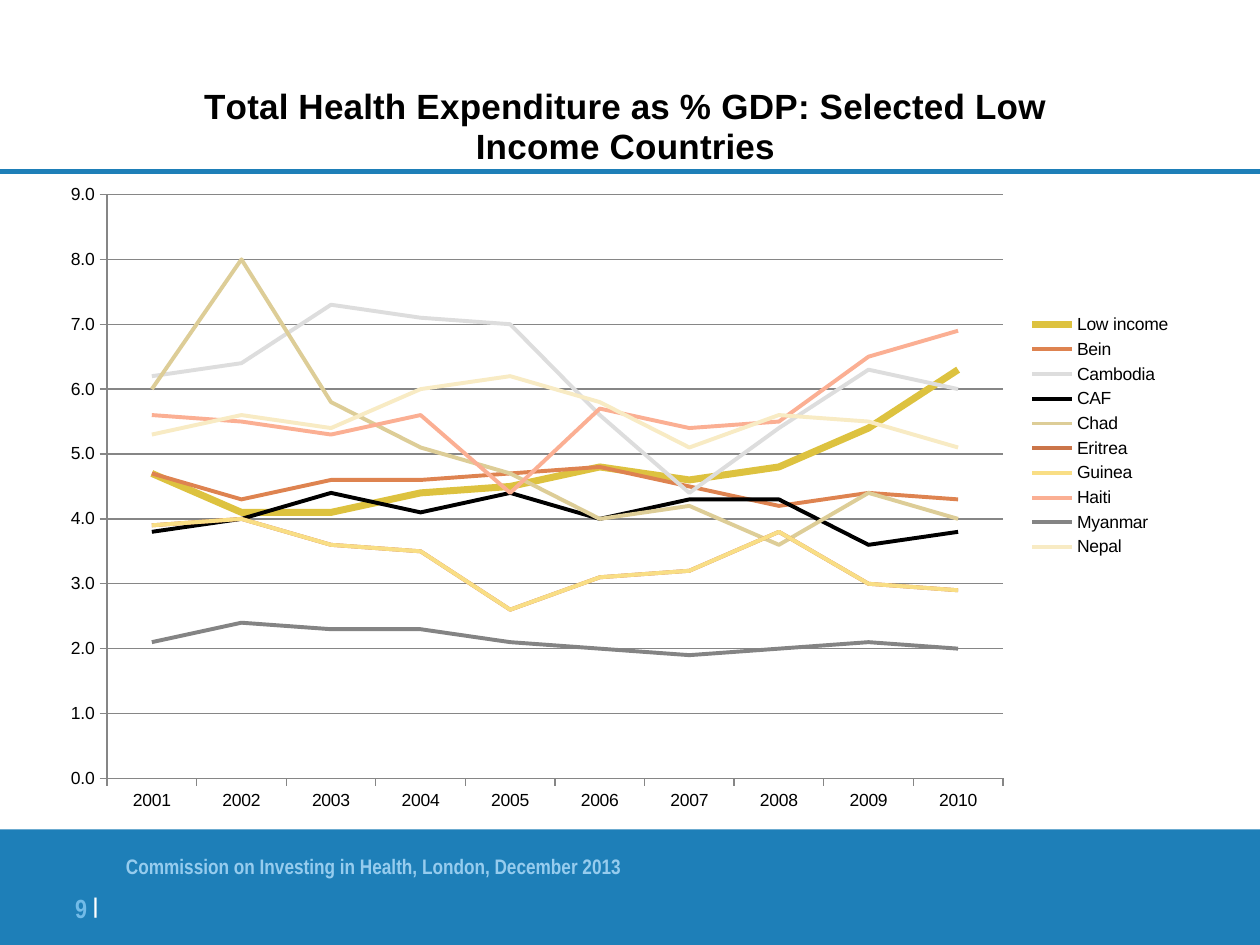
from lxml.etree import SubElement
from pptx import Presentation
from pptx.chart.data import CategoryChartData
from pptx.dml.color import RGBColor as RGB
from pptx.enum.chart import XL_CHART_TYPE as CHART, XL_LEGEND_POSITION as LEGEND, XL_TICK_MARK as TICK
from pptx.enum.shapes import MSO_CONNECTOR as CONN, MSO_SHAPE as SHAPE
from pptx.enum.text import PP_ALIGN as ALIGN
from pptx.oxml import parse_xml
from pptx.oxml.ns import nsdecls, qn
from pptx.util import Pt

TITLE = "Total Health Expenditure as % GDP: Selected Low Income Countries"
FOOTER = "Commission on Investing in Health, London, December 2013"
YEARS = [str(y) for y in range(2001, 2011)]
SERIES = [
    ("Low income", "DDC23F", [4.7, 4.1, 4.1, 4.4, 4.5, 4.8, 4.6, 4.8, 5.4, 6.3]),
    ("Bein", "DE8350", [4.7, 4.3, 4.6, 4.6, 4.7, 4.8, 4.5, 4.2, 4.4, 4.3]),
    ("Cambodia", "DDDDDD", [6.2, 6.4, 7.3, 7.1, 7, 5.6, 4.4, 5.4, 6.3, 6]),
    ("CAF", "000000", [3.8, 4, 4.4, 4.1, 4.4, 4, 4.3, 4.3, 3.6, 3.8]),
    ("Chad", "DDCD97", [6, 8, 5.8, 5.1, 4.7, 4, 4.2, 3.6, 4.4, 4]),
    ("Eritrea", "CB7549", [3.9, 4, 3.6, 3.5, 2.6, 3.1, 3.2, 3.8, 3, 2.9]),
    ("Guinea", "F9DE85", [3.9, 4, 3.6, 3.5, 2.6, 3.1, 3.2, 3.8, 3, 2.9]),
    ("Haiti", "FBAF93", [5.6, 5.5, 5.3, 5.6, 4.4, 5.7, 5.4, 5.5, 6.5, 6.9]),
    ("Myanmar", "848484", [2.1, 2.4, 2.3, 2.3, 2.1, 2, 1.9, 2, 2.1, 2]),
    ("Nepal", "F8EBC4", [5.3, 5.6, 5.4, 6, 6.2, 5.8, 5.1, 5.6, 5.5, 5.1]),
]
THEME = dict(
    blue="1E7FB8", footer="96CCEE", number="72BBE8", bar="FFFFFF", ink="000000", grid="868686",
    font="Arial", narrow="Arial Narrow",
    title=20, chart=10, footer_size=12, number_size=15, bar_size=21,
)
WIDTH, HEIGHT = 720, 540
RULE_Y, BAND_Y = 98, 474


def style(font, name, size, color, bold=False):
    """Set the face, size, colour and weight of a font."""
    font.name, font.size, font.bold = name, Pt(size), bold
    font.color.rgb = RGB.from_string(color)


def stroke(line, color, width):
    """Give a line its colour and width."""
    line.color.rgb, line.width = RGB.from_string(color), Pt(width)


def add_text(s, box, runs, align=ALIGN.LEFT):
    """Add a one-paragraph text box of (text, size, colour) runs."""
    tf = s.shapes.add_textbox(*map(Pt, box)).text_frame
    tf.word_wrap = True
    tf.margin_left = tf.margin_right = tf.margin_top = tf.margin_bottom = 0
    p = tf.paragraphs[0]
    p.alignment = align
    for text, size, color in runs:
        r = p.add_run()
        r.text = text
        style(r.font, THEME["narrow"], size, color, True)
    return p


def set_layout(parent, inner=False, **places):
    """Place a chart part by fractions of the chart area."""
    for old in parent.findall(qn("c:layout")):
        parent.remove(old)
    target = '<c:layoutTarget val="inner"/>' if inner else ""
    modes = "".join(f'<c:{k}Mode val="edge"/>' for k in "xy")
    values = "".join(f'<c:{k} val="{v}"/>' for k, v in places.items())
    layout = parse_xml(f'<c:layout {nsdecls("c")}><c:manualLayout>{target}{modes}{values}'
                       "</c:manualLayout></c:layout>")
    parent.insert(0 if inner else 1, layout)


def set_overlay(title):
    """Let the title lie over the chart without moving the plot."""
    for old in title.findall(qn("c:overlay")):
        title.remove(old)
    title.insert(2, parse_xml(f'<c:overlay {nsdecls("c")} val="1"/>'))


def add_frame(s):
    """Add the rule, the bottom band and the footer texts."""
    rule = s.shapes.add_connector(CONN.STRAIGHT, 0, Pt(RULE_Y), Pt(WIDTH), Pt(RULE_Y))
    stroke(rule.line, THEME["blue"], 3)
    SubElement(rule._element.spPr, qn("a:effectLst"))
    band = s.shapes.add_shape(SHAPE.RECTANGLE, 0, Pt(BAND_Y), Pt(WIDTH), Pt(HEIGHT - BAND_Y))
    band.shadow.inherit = False
    band.fill.solid()
    band.fill.fore_color.rgb = RGB.from_string(THEME["blue"])
    band.line.fill.background()
    add_text(s, (72, 487.5, 452, 34), [(FOOTER, THEME["footer_size"], THEME["footer"])])
    p = add_text(s, (28, 504, 28, 26), [
        ("9 ", THEME["number_size"], THEME["number"]),
        ("|", THEME["bar_size"], THEME["bar"]),
    ], ALIGN.RIGHT)
    p.runs[1].font._element.set("baseline", "14000")


def add_line_chart(s):
    """Add the line chart with its title, axes and legend."""
    data = CategoryChartData(number_format="0.0")
    data.categories = YEARS
    for name, _, values in SERIES:
        data.add_series(name, values)
    box = map(Pt, (28.8, 26.6, 648, 445))
    chart = s.shapes.add_chart(CHART.LINE, *box, data).chart
    style(chart.font, THEME["font"], THEME["chart"], THEME["ink"])

    title = chart.chart_title
    title.text_frame.text = TITLE
    style(title.text_frame.paragraphs[0].runs[0].font, THEME["font"], THEME["title"], THEME["ink"], True)
    set_layout(title._element, x=0.13, y=0.04)
    set_overlay(title._element)

    chart.has_legend = True
    chart.legend.position = LEGEND.RIGHT
    chart.legend.include_in_layout = False

    axis = chart.value_axis
    axis.minimum_scale, axis.maximum_scale, axis.major_unit = 0, 9, 1
    axis.tick_labels.number_format = "0.0"
    axis.tick_labels.number_format_is_linked = False
    stroke(axis.major_gridlines.format.line, THEME["grid"], 0.75)
    for ax in (axis, chart.category_axis):
        ax.major_tick_mark = TICK.OUTSIDE
        stroke(ax.format.line, THEME["grid"], 0.75)

    plot = chart.plots[0]
    plot.vary_by_categories = False
    set_layout(plot._element.getparent(), inner=True, x=0.05, y=0.19, w=0.79, h=0.75)
    for i, (line, (_, color, _)) in enumerate(zip(plot.series, SERIES)):
        line.smooth = False
        stroke(line.format.line, color, 4 if i == 0 else 2.25)


def main():
    """Build the slide and save it."""
    prs = Presentation()
    prs.slide_width, prs.slide_height = Pt(WIDTH), Pt(HEIGHT)
    s = prs.slides.add_slide(prs.slide_layouts[6])
    add_frame(s)
    add_line_chart(s)
    prs.save("out.pptx")


if __name__ == "__main__":
    main()
